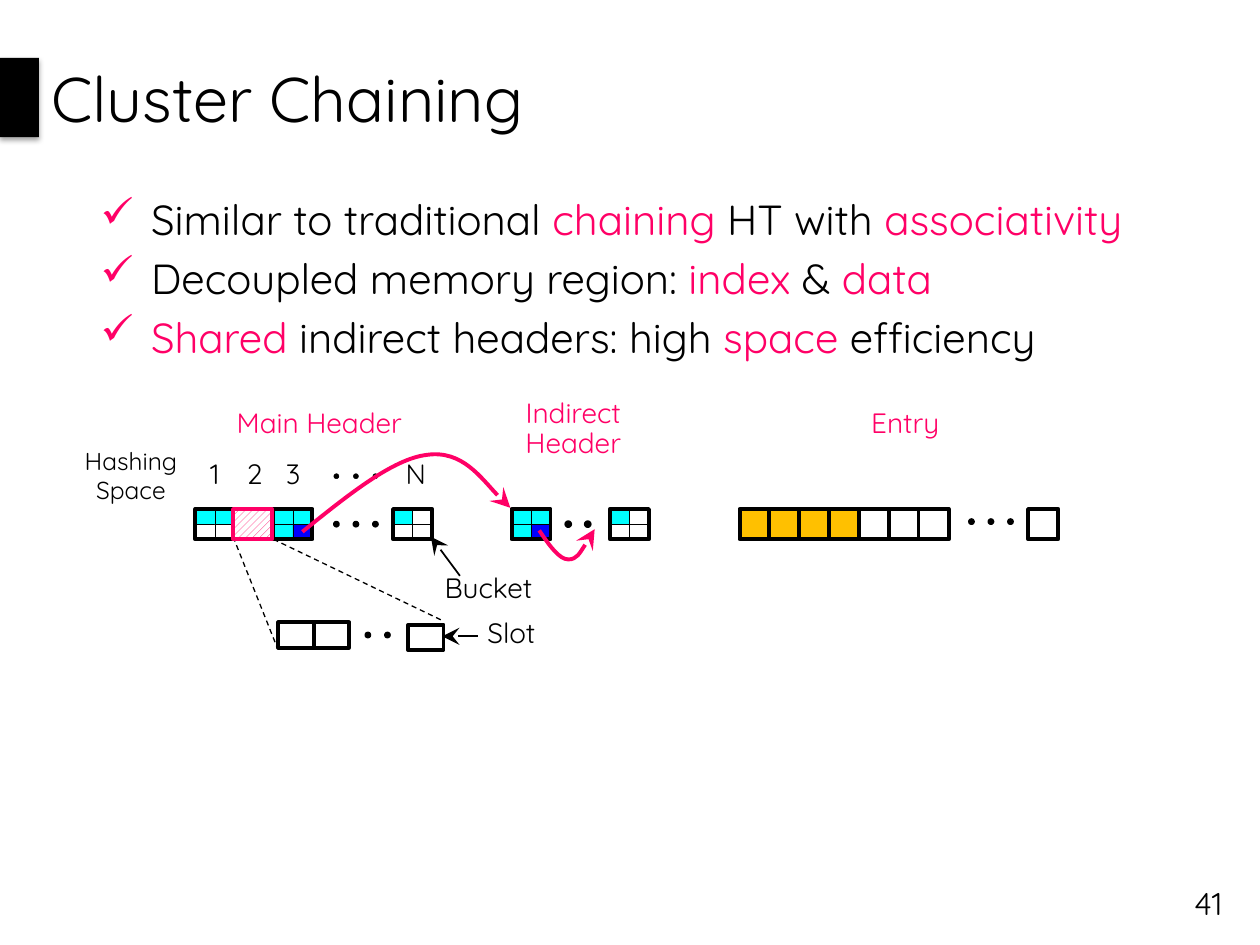
from lxml import etree
from pptx import Presentation
from pptx import util as u
from pptx.dml import color
from pptx.enum import dml, shapes, text
from pptx.oxml import ns

HUES = {"black": "000000", "white": "FFFFFF", "pink": "FF0066",
        "cyan": "00FFFF", "blue": "0000FF", "gold": "FFC000"}
STEP = 0.155
TOP = 4.04


class Sketch:
    """Holds the style and the current slide, and draws each kind of element."""

    def __init__(self, slide, font="Quicksand"):
        self.slide = slide
        self.font = font

    def hue(self, name):
        return color.RGBColor.from_string(HUES[name])

    def node(self, parent, tag, **attrs):
        return etree.SubElement(parent, ns.qn("a:" + tag), attrs)

    def edge(self, item, hue, width, head=False):
        item.line.color.rgb = self.hue(hue)
        item.line.width = u.Pt(width)
        if head:
            self.node(item.line._get_or_add_ln(), "tailEnd",
                      type="stealth", w="lg", len="lg")

    def shape(self, x, y, w, h, fill=None, line=None, width=2.25, kind="RECTANGLE"):
        item = self.slide.shapes.add_shape(
            shapes.MSO_SHAPE[kind], *map(u.Inches, (x, y, w, h)))
        item.shadow.inherit = False
        if fill:
            item.fill.solid()
            item.fill.fore_color.rgb = self.hue(fill)
        else:
            item.fill.background()
        if line:
            self.edge(item, line, width)
        else:
            item.line.fill.background()
        return item

    def shade(self, item):
        glow = self.node(item._element.spPr.find(ns.qn("a:effectLst")), "outerShdw",
                         blurRad=str(u.Pt(3.1)), dist=str(u.Pt(1.8)),
                         dir="5400000", rotWithShape="0")
        tint = self.node(glow, "srgbClr", val=HUES["black"])
        self.node(tint, "alpha", val="35000")

    def hatch(self, item, hue):
        item.fill.patterned()
        item.fill.pattern = dml.MSO_PATTERN.WIDE_UPWARD_DIAGONAL
        item.fill.fore_color.rgb = self.hue(hue)
        item.fill.back_color.rgb = self.hue("white")

    def bucket(self, x, fills):
        for i, fill in enumerate(fills):
            row, col = divmod(i, 2)
            self.shape(x + col * STEP, TOP + row * 0.12, 0.16, 0.12, fill, "black", 0.25)
        self.shape(x, TOP, 0.31, 0.24, line="black")

    def dots(self, x, y, count, width=1):
        for i in range(count):
            self.shape(x + i * STEP, y, 0.04, 0.04, "black", "black", width, "OVAL")

    def line(self, start, end, width, head=False, dash=False):
        item = self.slide.shapes.add_connector(
            shapes.MSO_CONNECTOR.STRAIGHT, *map(u.Inches, start + end))
        if dash:
            item.line.dash_style = dml.MSO_LINE.DASH
        self.edge(item, "black", width, head)
        self.node(item._element.spPr, "effectLst")

    def curve(self, points, hue):
        spots = [tuple(map(u.Inches, spot)) for spot in points]
        pen = self.slide.shapes.build_freeform(*spots[0])
        pen.add_line_segments(spots[1:], close=False)
        item = pen.convert_to_shape()
        item.shadow.inherit = False
        item.fill.background()
        self.edge(item, hue, 2.25, True)
        route = next(item._element.iter(ns.qn("a:path")))
        legs = route.findall(ns.qn("a:lnTo"))
        for i in range(0, len(legs), 3):
            bend = self.node(route, "cubicBezTo")
            for leg in legs[i:i + 3]:
                bend.append(leg[0])
                route.remove(leg)

    def frame(self, x, y, w, h, anchor="TOP"):
        box = self.slide.shapes.add_textbox(*map(u.Inches, (x, y, w, h))).text_frame
        box.word_wrap = True
        box.vertical_anchor = text.MSO_ANCHOR[anchor]
        return box

    def style(self, para, size):
        para.font.name = self.font
        para.font.size = u.Pt(size)

    def label(self, words, x, y, w, h, size=16, hue="black", align="CENTER",
              anchor="TOP", space=None, wrap=True):
        box = self.frame(x, y, w, h, anchor)
        box.word_wrap = wrap
        para = box.paragraphs[0]
        para.text = words
        para.alignment = text.PP_ALIGN[align]
        para.line_spacing = space
        self.style(para, size)
        para.font.color.rgb = self.hue(hue)

    def bullets(self, rows, x, y, w, h):
        box = self.frame(x, y, w, h)
        for i, row in enumerate(rows):
            para = box.add_paragraph() if i else box.paragraphs[0]
            props = para._p.get_or_add_pPr()
            props.set("marL", str(u.Inches(0.69)))
            props.set("indent", str(u.Inches(-0.4)))
            self.node(self.node(props, "spcBef"), "spcPct", val="20000")
            self.node(self.node(props, "buClr"), "srgbClr", val=HUES["pink"])
            self.node(props, "buChar", char="✓")
            self.style(para, 24)
            for words, hue in row:
                run = para.add_run()
                run.text = words
                run.font.color.rgb = self.hue(hue)


def main():
    deck = Presentation()
    deck.slide_width, deck.slide_height = u.Inches(10), u.Inches(7.5)
    art = Sketch(deck.slides.add_slide(deck.slide_layouts[6]))

    art.shade(art.shape(0, 0.46, 0.31, 0.63, "black"))
    art.label("Cluster Chaining", 0.31, 0, 9.69, 1.55, 36, align="LEFT", anchor="MIDDLE")
    art.label("41", 9.25, 6.97, 0.55, 0.4, 18, align="RIGHT", anchor="MIDDLE")
    art.bullets([
        [("Similar to traditional ", "black"), ("chaining", "pink"),
         (" HT with ", "black"), ("associativity", "pink")],
        [("Decoupled memory region: ", "black"), ("index", "pink"),
         (" & ", "black"), ("data", "pink")],
        [("Shared ", "pink"), ("indirect headers: high ", "black"),
         ("space ", "pink"), ("efficiency", "black")],
    ], 0.41, 1.49, 9.32, 1.71)

    full = ["cyan"] * 3 + ["blue"]
    half = ["cyan"] * 2 + ["white"] * 2
    one = ["cyan"] + ["white"] * 3
    for x, fills in [(2.17, full), (1.55, half), (3.12, one), (4.06, full), (4.84, one)]:
        art.bucket(x, fills)
    for mark, x in [("1", 1.55), ("2", 1.86), ("3", 2.17), ("N", 3.12)]:
        art.label(mark, x, 3.64, 0.31, 0.24, anchor="MIDDLE", wrap=False)
    art.label("Hashing Space", 0.54, 3.49, 1, 0.57, 14)

    for x, y, count, width in [(2.65, 4.14, 3, 1), (4.49, 4.14, 2, 1.5),
                               (2.65, 3.76, 3, 0.25), (2.9, 5.02, 2, 1),
                               (7.69, 4.12, 3, 1)]:
        art.dots(x, y, count, width)
    art.curve([(2.4, 4.22), (2.76, 3.93), (3.12, 3.64), (3.39, 3.61),
               (3.67, 3.57), (3.97, 3.97), (4.05, 4.03)], "pink")
    art.curve([(4.28, 4.21), (4.36, 4.33), (4.44, 4.44), (4.51, 4.44),
               (4.58, 4.44), (4.65, 4.32), (4.72, 4.2)], "pink")

    for x, y in [(2.21, 4.94), (2.49, 4.94), (3.24, 4.96)]:
        art.shape(x, y, 0.28, 0.2, line="black")
    art.line((1.85, 4.26), (2.2, 5.14), 0.75, dash=True)
    art.line((2.17, 4.28), (3.5, 4.92), 0.75, dash=True)
    art.line((3.65, 4.57), (3.42, 4.26), 1, head=True)
    art.line((3.79, 5.05), (3.51, 5.05), 1, head=True)
    art.hatch(art.shape(1.85, TOP, 0.31, 0.24, line="pink"), "pink")

    side = 0.24
    for i in range(7):
        art.shape(5.87 + i * 1.42 / 6, TOP, side, side, "gold" if i < 4 else "white", "black")
    art.shape(8.16, TOP, side, side, "white", "black")

    for words, x, y, w in [("Main Header", 1.57, 3.2, 1.93), ("Entry", 6.22, 3.2, 1.93),
                           ("Indirect Header", 4.02, 3.12, 1.06)]:
        art.label(words, x, y, w, 0.34, hue="pink", space=0.9)
    for words, x, y, w in [("Bucket", 3.43, 4.51, 1.08), ("Slot", 3.77, 4.87, 0.59)]:
        art.label(words, x, y, w, 0.34, align="LEFT", space=0.9)
    deck.save("out.pptx")


if __name__ == "__main__":
    main()
